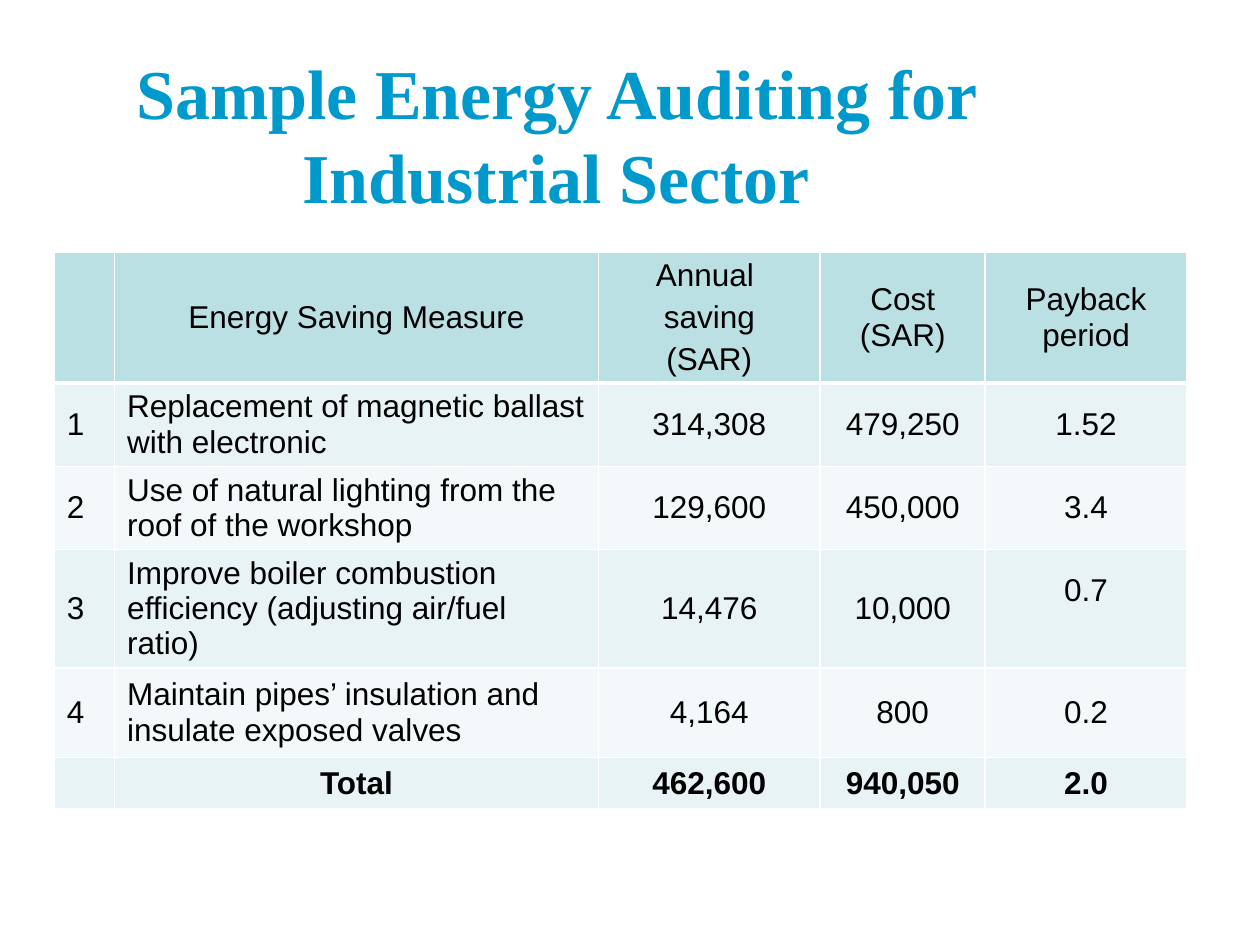
from pptx import Presentation
from pptx.dml.color import RGBColor
from pptx.enum.text import MSO_ANCHOR as Anchor, PP_ALIGN as Align
from pptx.oxml import parse_xml
from pptx.oxml.ns import nsdecls
from pptx.util import Inches, Pt

COLORS = {
    "title": "0099CC",
    "text": "000000",
    "header": "BBE0E3",
    "odd": "E7F3F4",
    "even": "F3F9FA",
    "border": "FFFFFF",
}
COLUMN_WIDTHS = [0.48, 3.84, 1.76, 1.31, 1.6]
ROW_HEIGHTS = [1.03, 0.66, 0.66, 0.94, 0.71, 0.41]
MEASURES = [
    ["", "Energy Saving Measure", "Annual \nsaving\n(SAR)", "Cost (SAR)", "Payback period"],
    ["1", "Replacement of magnetic ballast with electronic", "314,308", "479,250", "1.52"],
    ["2", "Use of natural lighting from the roof of the workshop", "129,600", "450,000", "3.4"],
    ["3", "Improve boiler combustion efficiency (adjusting air/fuel ratio)", "14,476", "10,000", "0.7"],
    ["4", "Maintain pipes’ insulation and insulate exposed valves", "4,164", "800", "0.2"],
    ["", "Total", "462,600", "940,050", "2.0"],
]
TOTAL_ROW = len(MEASURES) - 1


def style_paragraph(para, font_name, size, color, bold, align):
    """Align a paragraph and format its runs."""
    para.alignment = align
    for span in para.runs:
        span.font.name = font_name
        span.font.size = Pt(size)
        span.font.bold = bold
        span.font.color.rgb = RGBColor.from_string(COLORS[color])


def add_title(page, text):
    """Add the centred slide title."""
    box = page.shapes.add_textbox(Inches(0.5), Inches(0.3), Inches(7.83), Inches(1.25))
    frame = box.text_frame
    frame.word_wrap = True
    frame.margin_top = Inches(0.09)
    frame.text = text
    para = frame.paragraphs[0]
    para.line_spacing = Pt(48)
    style_paragraph(para, "Times New Roman", 40, "title", True, Align.CENTER)


def set_borders(cell, bottom_width):
    """Draw the cell borders, with a chosen width at the bottom."""
    properties = cell._tc.get_or_add_tcPr()
    widths = {"lnL": 1, "lnR": 1, "lnT": 1, "lnB": bottom_width}
    for position, (side, width) in enumerate(widths.items()):
        properties.insert(position, parse_xml(
            f'<a:{side} {nsdecls("a")} w="{Pt(width)}"><a:solidFill>'
            f'<a:srgbClr val="{COLORS["border"]}"/></a:solidFill></a:{side}>'))


def fill_cell(cell, text, row, column):
    """Write one table cell and style it by its row and column."""
    is_header = row == 0
    is_total = row == TOTAL_ROW
    fill = "header" if is_header else "odd" if row % 2 else "even"
    centred = is_header or is_total or column > 1
    cell.fill.solid()
    cell.fill.fore_color.rgb = RGBColor.from_string(COLORS[fill])
    cell.vertical_anchor = Anchor.MIDDLE
    set_borders(cell, 3 if is_header else 1)
    cell.text_frame.text = text
    for index, para in enumerate(cell.text_frame.paragraphs):
        if index:
            para.space_before = Pt(3.6)
        style_paragraph(para, "Arial", 18, "text", is_total,
                        Align.CENTER if centred else Align.LEFT)


def add_measure_table(page):
    """Add the table of energy saving measures."""
    frame = page.shapes.add_table(
        len(MEASURES), len(COLUMN_WIDTHS), Inches(0.43), Inches(2),
        Inches(sum(COLUMN_WIDTHS)), Inches(sum(ROW_HEIGHTS)))
    table = frame.table
    for column, width in zip(table.columns, COLUMN_WIDTHS):
        column.width = Inches(width)
    for row, height in zip(table.rows, ROW_HEIGHTS):
        row.height = Inches(height)
    for row, texts in enumerate(MEASURES):
        for column, text in enumerate(texts):
            fill_cell(table.cell(row, column), text, row, column)
    table.cell(3, 4).margin_bottom = Inches(0.33)


def main():
    """Build and save the energy auditing slide."""
    deck = Presentation()
    deck.slide_width = Inches(10)
    deck.slide_height = Inches(7.5)
    page = deck.slides.add_slide(deck.slide_layouts[6])
    add_measure_table(page)
    add_title(page, "Sample Energy Auditing for Industrial Sector")
    deck.save("out.pptx")


if __name__ == "__main__":
    main()
